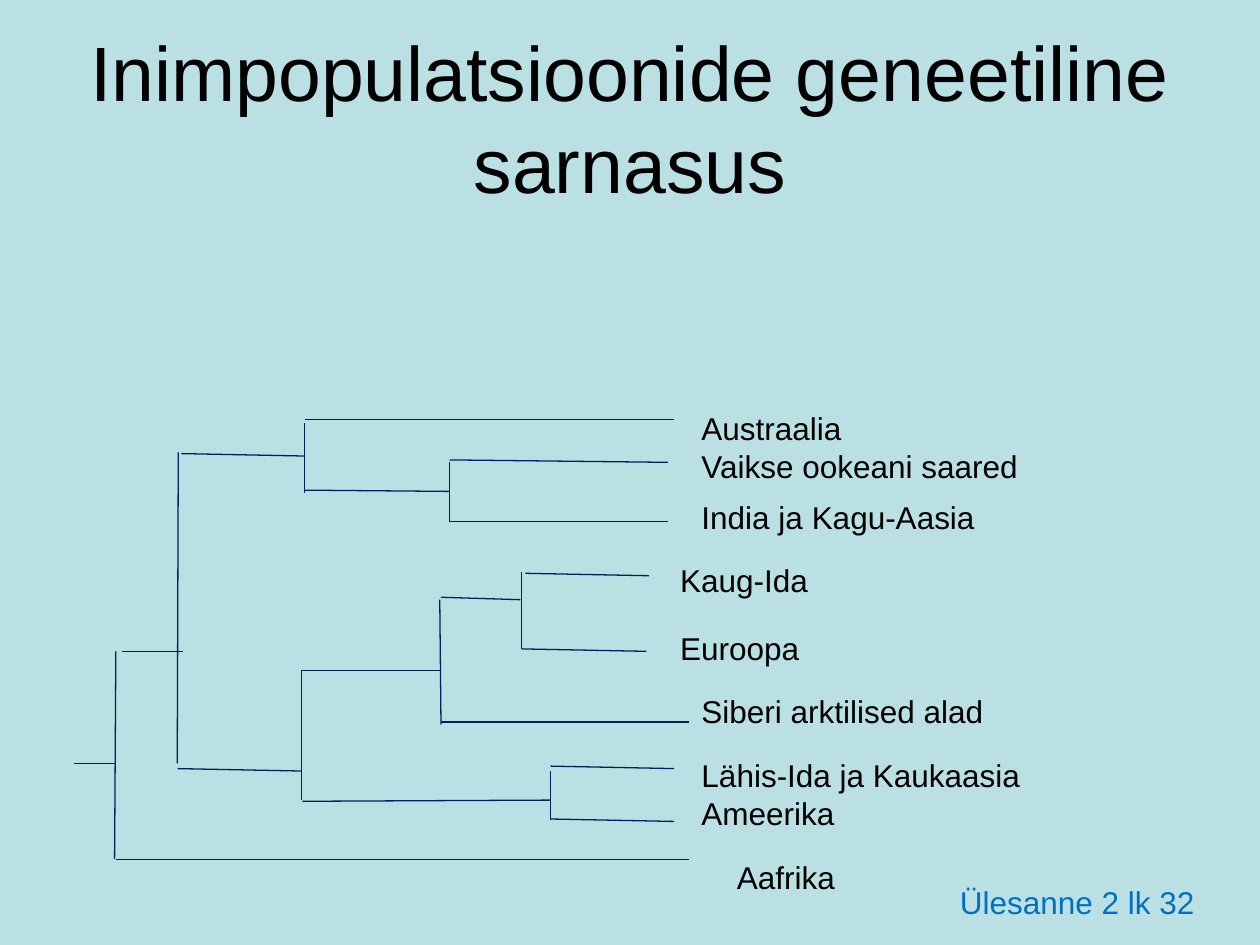
from lxml import etree
from pptx import Presentation
from pptx.dml.color import RGBColor
from pptx.enum.shapes import MSO_CONNECTOR
from pptx.enum.text import MSO_ANCHOR, MSO_AUTO_SIZE, PP_ALIGN
from pptx.oxml.ns import qn
from pptx.util import Pt

STRAIGHT = MSO_CONNECTOR.STRAIGHT
MIDDLE = MSO_ANCHOR.MIDDLE
CENTER = PP_ALIGN.CENTER
LEFT = PP_ALIGN.LEFT
NO_FIT = MSO_AUTO_SIZE.NONE
TITLE_ONLY = 5

COLORS = {"background": "BBE0E3", "text": "000000", "branch": "002060", "reference": "0070C0"}

# Each branch: x and y of its start, x and y of its end
BRANCHES = [
    # Root and Africa
    (42.5, 436.3, 65.5, 436.3),
    (66.2, 372.2, 65.5, 491),
    (69.8, 372.2, 104.4, 372.2),
    (66.2, 491, 393.8, 491),
    (101.9, 258.5, 101.3, 436.3),
    # Australia, Pacific islands, India and South-East Asia
    (103.7, 259.2, 174.2, 260.6),
    (174.2, 241.9, 174.2, 281.5),
    (174.2, 239.8, 385.2, 239.8),
    (174.2, 280.1, 257, 280.8),
    (257, 264.2, 257, 298.1),
    (257, 262.8, 381.6, 264.2),
    (257, 298.1, 381.6, 298.1),
    # Far East, Europe, Siberia
    (101.5, 439.2, 172.1, 440.6),
    (172.1, 383, 172.1, 457.2),
    (172.1, 383, 252, 383),
    (251.3, 342.7, 252, 414),
    (252, 341.3, 297.4, 342.7),
    (252, 412.6, 393.8, 412.6),
    (298.1, 370.8, 298.1, 326.9),
    (300.2, 327.6, 370.8, 329),
    (298.1, 370.8, 369.4, 372.2),
    # Near East and America
    (172.8, 457.9, 314.6, 457.2),
    (314.6, 440.6, 314.6, 468.7),
    (314.6, 437.8, 385.2, 439.2),
    (314.6, 468, 385.2, 469.4),
]

# Each label: left, top, width, height, lines, space between lines, colour
LABELS = [
    (393.8, 230.4, 221, 72.7, ["Austraalia", "Vaikse ookeani saared"], 0, "text"),
    (393.8, 280.8, 244, 28.8, ["India ja Kagu-Aasia"], 0, "text"),
    (381.6, 316.8, 210, 67.7, ["Kaug-Ida", "Euroopa"], 17.5, "text"),
    (393.8, 391.7, 221, 28.8, ["Siberi arktilised alad"], 0, "text"),
    (393.8, 428.4, 266.4, 51.1, ["Lähis-Ida ja Kaukaasia", "Ameerika"], 0, "text"),
    (414, 486.7, 108, 28.8, ["Aafrika"], 0, "text"),
    (541.4, 501.1, 178.6, 28.8, ["Ülesanne 2 lk 32"], 0, "reference"),
]


def rgb(name):
    return RGBColor.from_string(COLORS[name])


def apply_format(target, values):
    for name, value in values.items():
        setattr(target, name, value)


def write_line(para, text, size, color, alignment):
    para.alignment = alignment
    span = para.add_run()
    span.text = text
    apply_format(span.font, {"name": "Arial", "size": Pt(size)})
    span.font.color.rgb = rgb(color)


def add_title(page, text):
    title = page.shapes.title
    apply_format(title, {"left": Pt(36), "top": Pt(21.6), "width": Pt(648), "height": Pt(90)})
    apply_format(title.text_frame, {"vertical_anchor": MIDDLE, "word_wrap": True,
                                    "auto_size": NO_FIT})
    write_line(title.text_frame.paragraphs[0], text, 44, "text", CENTER)


def add_branch(page, ends):
    branch = page.shapes.add_connector(STRAIGHT, *map(Pt, ends))
    branch.line.color.rgb = rgb("branch")
    branch.line.width = Pt(0.75)
    etree.SubElement(branch._element.spPr, qn("a:effectLst"))


def add_label(page, left, top, width, height, lines, gap, color):
    box = page.shapes.add_textbox(Pt(left), Pt(top), Pt(width), Pt(height))
    frame = box.text_frame
    frame.word_wrap = True
    for index, text in enumerate(lines):
        para = frame.add_paragraph() if index else frame.paragraphs[0]
        para.space_before = Pt(gap if index else 0)
        write_line(para, text, 18, color, LEFT)


def main():
    deck = Presentation()
    apply_format(deck, {"slide_width": Pt(720), "slide_height": Pt(540)})
    page = deck.slides.add_slide(deck.slide_layouts[TITLE_ONLY])
    page.background.fill.solid()
    page.background.fill.fore_color.rgb = rgb("background")
    add_title(page, "Inimpopulatsioonide geneetiline sarnasus")
    for ends in BRANCHES:
        add_branch(page, ends)
    for label in LABELS:
        add_label(page, *label)
    deck.save("out.pptx")


if __name__ == "__main__":
    main()
